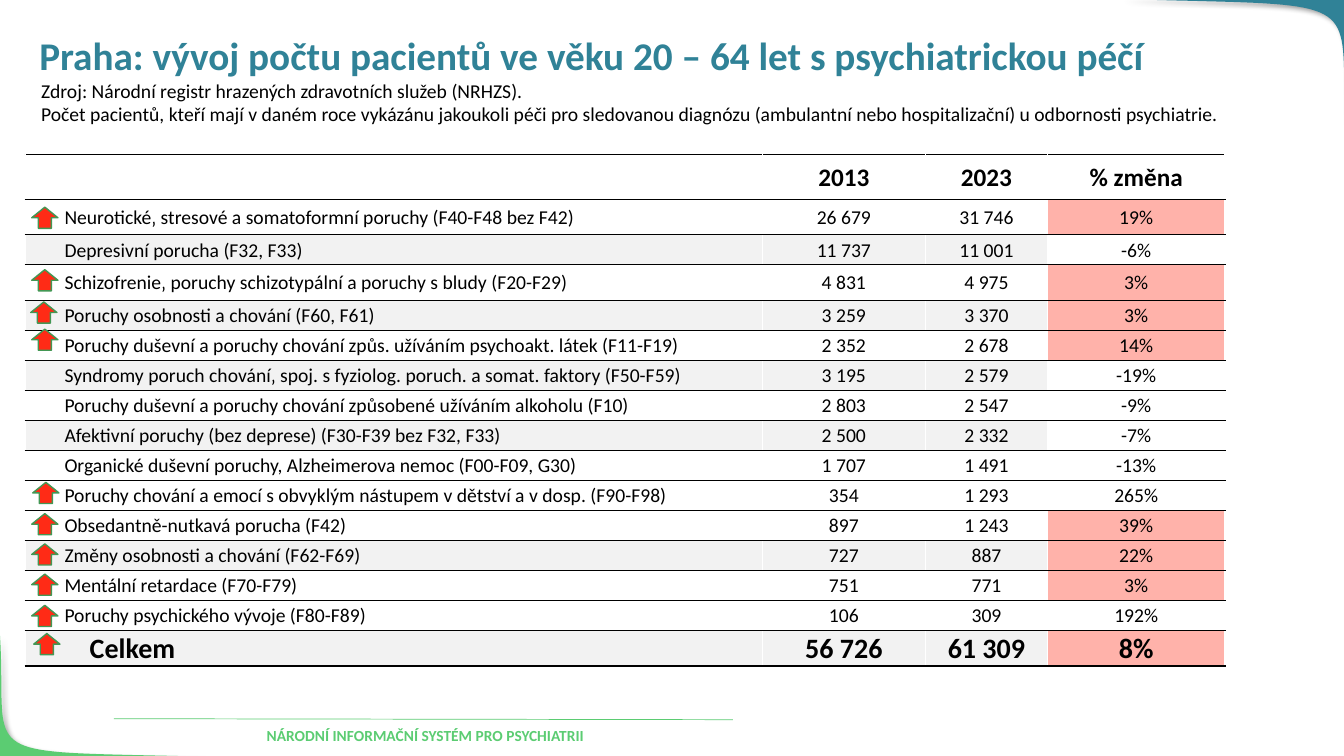
from lxml.etree import SubElement
from pptx import Presentation
from pptx.dml.color import RGBColor
from pptx.enum.shapes import MSO_CONNECTOR as Connector, MSO_SHAPE as Shape
from pptx.enum.text import MSO_ANCHOR as Anchor, MSO_AUTO_SIZE as AutoSize, PP_ALIGN as Align
from pptx.oxml.ns import qn
from pptx.util import Inches, Pt

COLORS = {
    "teal": "308297", "green": "5BCC72", "black": "000000", "white": "FFFFFF",
    "band": "F2F2F2", "rise": "FFB2AA", "arrow": "FF2B16", "arrow_edge": "439754",
}
TITLE = "Praha: vývoj počtu pacientů ve věku 20 – 64 let s psychiatrickou péčí"
SOURCE = (
    "Zdroj: Národní registr hrazených zdravotních služeb (NRHZS).\v"
    "Počet pacientů, kteří mají v daném roce vykázánu jakoukoli péči pro sledovanou "
    "diagnózu (ambulantní nebo hospitalizační) u odbornosti psychiatrie."
)
ROWS = [
    ("", "2013", "2023", "% změna"),
    ("Neurotické‚ stresové a somatoformní poruchy (F40-F48 bez F42)", "26 679", "31 746", "19%"),
    ("Depresivní porucha (F32, F33)", "11 737", "11 001", "-6%"),
    ("Schizofrenie‚ poruchy schizotypální a poruchy s bludy (F20-F29)", "4 831", "4 975", "3%"),
    ("Poruchy osobnosti a chování (F60, F61)", "3 259", "3 370", "3%"),
    ("Poruchy duševní a poruchy chování způs. užíváním psychoakt. látek (F11-F19)",
     "2 352", "2 678", "14%"),
    ("Syndromy poruch chování‚ spoj. s fyziolog. poruch. a somat. faktory (F50-F59)",
     "3 195", "2 579", "-19%"),
    ("Poruchy duševní a poruchy chování způsobené užíváním alkoholu (F10)",
     "2 803", "2 547", "-9%"),
    ("Afektivní poruchy (bez deprese) (F30-F39 bez F32, F33)", "2 500", "2 332", "-7%"),
    ("Organické duševní poruchy, Alzheimerova nemoc (F00-F09, G30)", "1 707", "1 491", "-13%"),
    ("Poruchy chování a emocí s obvyklým nástupem v dětství a v dosp. (F90-F98)",
     "354", "1 293", "265%"),
    ("Obsedantně-nutkavá porucha (F42)", "897", "1 243", "39%"),
    ("Změny osobnosti a chování (F62-F69)", "727", "887", "22%"),
    ("Mentální retardace (F70-F79)", "751", "771", "3%"),
    ("Poruchy psychického vývoje (F80-F89)", "106", "309", "192%"),
    ("Celkem", "56 726", "61 309", "8%"),
]
TOTAL_ROW = len(ROWS) - 1
BANDED_ROWS = {2, 4, 6, 8, 12, TOTAL_ROW}
RISING_ROWS = {1, 3, 4, 5, 11, 12, 13, TOTAL_ROW}
COLUMN_WIDTHS = [7.31, 1.62, 1.21, 1.76]
TALL_ROWS = {0: 0.45, 1: 0.35, 3: 0.35, TOTAL_ROW: 0.35}
TABLE_HEIGHT = 5.08
ARROWS = [
    (0.34, 2.03), (0.34, 2.65), (0.33, 2.97), (0.34, 3.24), (0.35, 4.76),
    (0.34, 5.07), (0.34, 5.37), (0.34, 5.67), (0.34, 5.98), (0.36, 6.26),
]


def bezier(start, control_a, control_b, end, steps=40):
    """Return points along a cubic curve."""
    return [
        tuple((1 - t) ** 3 * a + 3 * t * (1 - t) ** 2 * b + 3 * t * t * (1 - t) * c + t ** 3 * d
              for a, b, c, d in zip(start, control_a, control_b, end))
        for t in (step / steps for step in range(steps + 1))
    ]


class SlideBuilder:
    """Hold the slide and its style and add each kind of element."""

    def __init__(self, slide, font="Calibri"):
        self.slide = slide
        self.shapes = slide.shapes
        self.font = font

    def color(self, name):
        return RGBColor.from_string(COLORS[name])

    def format_text(self, text_frame, size, color, bold=False, align=Align.LEFT):
        for paragraph in text_frame.paragraphs:
            paragraph.alignment = align
            for font in [paragraph.font] + [run.font for run in paragraph.runs]:
                font.name = self.font
                font.size = Pt(size)
                font.bold = bold
                font.color.rgb = self.color(color)

    def title(self, text, left, top, width, height):
        shape = self.shapes.title
        shape.left, shape.top = Inches(left), Inches(top)
        shape.width, shape.height = Inches(width), Inches(height)
        text_frame = shape.text_frame
        text_frame.text = text
        text_frame.auto_size = AutoSize.NONE
        text_frame.vertical_anchor = Anchor.MIDDLE
        text_frame.paragraphs[0].line_spacing = 0.9
        self.format_text(text_frame, 28, "teal", bold=True)

    def text(self, text, left, top, width, height, size, color, **style):
        shape = self.shapes.add_textbox(Inches(left), Inches(top), Inches(width), Inches(height))
        shape.text_frame.word_wrap = True
        shape.text_frame.text = text
        self.format_text(shape.text_frame, size, color, **style)

    def corner(self, curve, tip, fill):
        points = [(Inches(x), Inches(y)) for x, y in bezier(*curve) + [tip]]
        builder = self.shapes.build_freeform(*points[0], scale=1.0)
        builder.add_line_segments(points[1:], close=True)
        shape = builder.convert_to_shape()
        shape.fill.solid()
        shape.fill.fore_color.rgb = self.color(fill)
        shape.line.fill.background()
        effects = SubElement(shape.element.spPr, qn("a:effectLst"))
        shadow = SubElement(effects, qn("a:outerShdw"), blurRad=str(Pt(4)), dist=str(Pt(3)),
                            dir="2700000", algn="tl", rotWithShape="0")
        tone = SubElement(shadow, qn("a:srgbClr"), val=COLORS["black"])
        SubElement(tone, qn("a:alpha"), val="40000")

    def line(self, left, top, right, bottom, color, width):
        connector = self.shapes.add_connector(
            Connector.STRAIGHT, Inches(left), Inches(top), Inches(right), Inches(bottom))
        connector.line.color.rgb = self.color(color)
        connector.line.width = Pt(width)
        SubElement(connector.element.spPr, qn("a:effectLst"))

    def arrow(self, left, top):
        shape = self.shapes.add_shape(
            Shape.RIGHT_ARROW, Inches(left), Inches(top), Inches(0.21), Inches(0.26))
        shape.rotation = 270
        shape.shadow.inherit = False
        shape.fill.solid()
        shape.fill.fore_color.rgb = self.color("arrow")
        shape.line.color.rgb = self.color("arrow_edge")
        shape.line.width = Pt(1)

    def borders(self, cell):
        properties = cell._tc.get_or_add_tcPr()
        for side, color in zip("LRTB", ("white", "white", "black", "black")):
            edge = SubElement(properties, qn(f"a:ln{side}"), w=str(Pt(1)))
            fill = SubElement(edge, qn("a:solidFill"))
            SubElement(fill, qn("a:srgbClr"), val=COLORS[color])

    def cell(self, cell, text, row, column):
        is_label, is_total = column == 0, row == TOTAL_ROW
        indent = 0.64 if is_total else 0.39
        cell.margin_left = Inches(indent if is_label else 0.01)
        cell.margin_right = cell.margin_top = Inches(0.01)
        cell.margin_bottom = 0
        cell.vertical_anchor = Anchor.BOTTOM if is_total and not is_label else Anchor.MIDDLE
        cell.text_frame.text = text
        size = {0: 18, TOTAL_ROW: 20}.get(row, 14)
        self.format_text(cell.text_frame, size, "black", bold=row in (0, TOTAL_ROW),
                         align=Align.LEFT if is_label else Align.CENTER)
        self.borders(cell)
        is_change = column == len(COLUMN_WIDTHS) - 1
        highlighted = RISING_ROWS if is_change else BANDED_ROWS
        if row in highlighted:
            cell.fill.solid()
            cell.fill.fore_color.rgb = self.color("rise" if is_change else "band")
        else:
            cell.fill.background()

    def table(self, left, top):
        frame = self.shapes.add_table(
            len(ROWS), len(COLUMN_WIDTHS), Inches(left), Inches(top),
            Inches(sum(COLUMN_WIDTHS)), Inches(TABLE_HEIGHT))
        table = frame.table
        table.first_row = table.horz_banding = False
        for column, width in zip(table.columns, COLUMN_WIDTHS):
            column.width = Inches(width)
        thin = (TABLE_HEIGHT - sum(TALL_ROWS.values())) / (len(ROWS) - len(TALL_ROWS))
        for row, values in enumerate(ROWS):
            table.rows[row].height = Inches(TALL_ROWS.get(row, thin))
            for column, value in enumerate(values):
                self.cell(table.cell(row, column), value, row, column)


def main():
    presentation = Presentation()
    presentation.slide_width, presentation.slide_height = Inches(13.33), Inches(7.5)
    builder = SlideBuilder(presentation.slides.add_slide(presentation.slide_layouts[5]))
    builder.corner([(2.13, 7.51), (-0.34, 7.44), (0.08, 7.59), (0, 6.3)], (-0.01, 7.51), "green")
    builder.corner([(11.11, -0.01), (13.7, 0.07), (13.26, -0.1), (13.35, 1.42)],
                   (13.35, -0.01), "teal")
    builder.line(1.13, 7.13, 7.27, 7.14, "green", 0.5)
    builder.text("NÁRODNÍ INFORMAČNÍ SYSTÉM PRO PSYCHIATRII", 1.47, 7.15, 5.5, 0.29,
                 11, "green", bold=True, align=Align.CENTER)
    builder.title(TITLE, 0.29, 0.26, 12.76, 0.63)
    builder.table(0.25, 1.53)
    builder.text(SOURCE, 0.31, 0.73, 12.73, 0.57, 14, "black")
    for left, top in ARROWS:
        builder.arrow(left, top)
    presentation.save("out.pptx")


if __name__ == "__main__":
    main()
